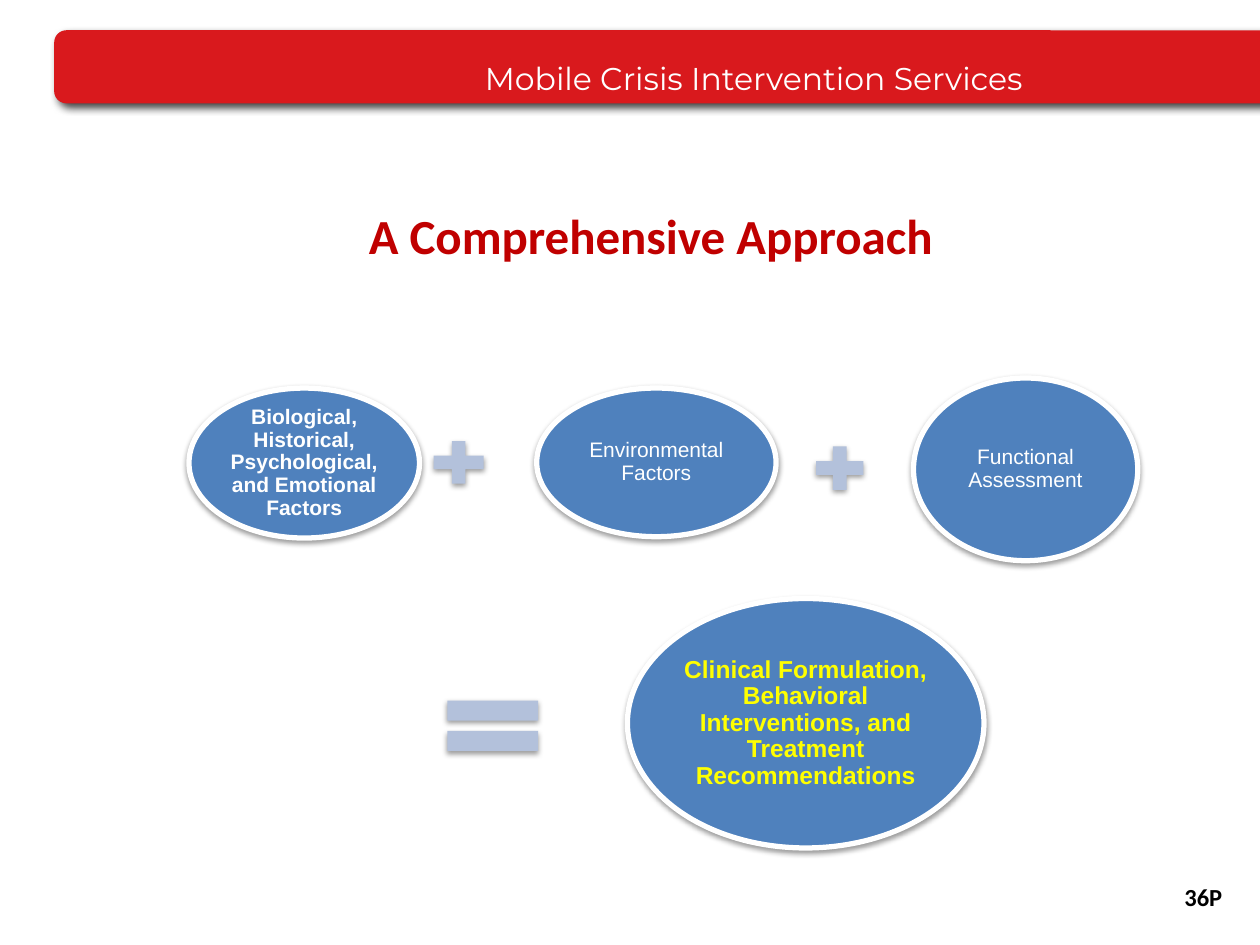
"""Build the slide that sums three kinds of factors into a clinical formulation."""
from lxml.etree import SubElement
from pptx import Presentation
from pptx.dml.color import RGBColor
from pptx.enum.shapes import MSO_SHAPE
from pptx.enum.text import MSO_ANCHOR, MSO_AUTO_SIZE, PP_ALIGN
from pptx.oxml.ns import qn
from pptx.util import Inches, Pt

BANNER = "Mobile Crisis Intervention Services"
TITLE = "A Comprehensive Approach"
PAGE = "36P"
RESULT = "Clinical Formulation,\nBehavioral Interventions, and\nTreatment Recommendations"
ELLIPSES = [
    ("Biological, Historical, Psychological, and Emotional Factors",
     (1.5, 3.08, 1.83, 1.19), 12, "FFFFFF", True),
    ("Environmental Factors", (4.26, 3.08, 1.9, 1.18), 12, "FFFFFF", False),
    ("Functional Assessment", (7.25, 3, 1.78, 1.45), 12, "FFFFFF", False),
    (RESULT, (4.98, 4.75, 2.83, 1.98), 14, "FFFF00", True),
]
OPERATORS = [
    (MSO_SHAPE.MATH_PLUS, (3.37, 3.44, 0.54, 0.46)),
    (MSO_SHAPE.MATH_PLUS, (6.41, 3.48, 0.51, 0.47)),
    (MSO_SHAPE.MATH_EQUAL, (3.42, 5.42, 0.98, 0.68)),
]
SOFT_SHADOW = (38, 3.1, 1.6, 90)
BANNER_SHADOW = (75, 5, 3, 45)


def rgb(color):
    return RGBColor.from_string(color)


def inches(box):
    return [Inches(length) for length in box]


def add_shadow(shape, opacity, blur, distance, angle):
    shape.shadow.inherit = False
    effects = shape._element.spPr.find(qn("a:effectLst"))
    outer = SubElement(effects, qn("a:outerShdw"), blurRad=str(Pt(blur)),
                       dist=str(Pt(distance)), dir=str(angle * 60000), rotWithShape="0")
    black = SubElement(outer, qn("a:srgbClr"), val="000000")
    SubElement(black, qn("a:alpha"), val=str(opacity * 1000))


def add_filled(slide, preset, box, fill, shadow):
    shape = slide.shapes.add_shape(preset, *inches(box))
    shape.fill.solid()
    shape.fill.fore_color.rgb = rgb(fill)
    shape.line.fill.background()
    add_shadow(shape, *shadow)
    return shape


def write(shape, text, font, size, color, bold=False, align=PP_ALIGN.CENTER,
          anchor=MSO_ANCHOR.MIDDLE, insets=(0.1, 0.05, 0.1, 0.05), spacing=1.0):
    frame = shape.text_frame
    frame.text = text
    frame.word_wrap = True
    frame.auto_size = MSO_AUTO_SIZE.NONE
    frame.vertical_anchor = anchor
    (frame.margin_left, frame.margin_top,
     frame.margin_right, frame.margin_bottom) = inches(insets)
    for paragraph in frame.paragraphs:
        paragraph.alignment = align
        paragraph.line_spacing = spacing
        for run in paragraph.runs:
            run.font.name = font
            run.font.size = Pt(size)
            run.font.bold = bold
            run.font.color.rgb = rgb(color)


def main():
    prs = Presentation()
    prs.slide_width, prs.slide_height = Inches(10), Inches(7.5)
    slide = prs.slides.add_slide(prs.slide_layouts[5])

    banner = add_filled(slide, MSO_SHAPE.ROUNDED_RECTANGLE, (0.43, 0.24, 9.82, 0.58),
                        "D9191D", BANNER_SHADOW)
    write(banner, BANNER, "Montserrat", 18, "FFFFFF", align=PP_ALIGN.LEFT,
          anchor=MSO_ANCHOR.BOTTOM, insets=(3.39, 0, 0, 0.02), spacing=0.9)

    title = slide.shapes.title
    title.left, title.top, title.width, title.height = inches((0.83, 1.58, 8.67, 1.25))
    write(title, TITLE, "Calibri", 28, "C00000", bold=True, anchor=MSO_ANCHOR.TOP)

    for text, box, size, color, bold in ELLIPSES:
        ellipse = add_filled(slide, MSO_SHAPE.OVAL, box, "4F81BD", SOFT_SHADOW)
        ellipse.line.color.rgb = rgb("FFFFFF")
        ellipse.line.width = Pt(3)
        write(ellipse, text, "Arial", size, color, bold, insets=(0.02,) * 4, spacing=0.9)

    for preset, box in OPERATORS:
        add_filled(slide, preset, box, "B3C1DB", SOFT_SHADOW)

    page = slide.shapes.add_textbox(*inches((5.3, 6.92, 4.5, 0.4)))
    write(page, PAGE, "Calibri", 14, "000000", bold=True, align=PP_ALIGN.RIGHT)

    prs.save("out.pptx")


if __name__ == "__main__":
    main()
